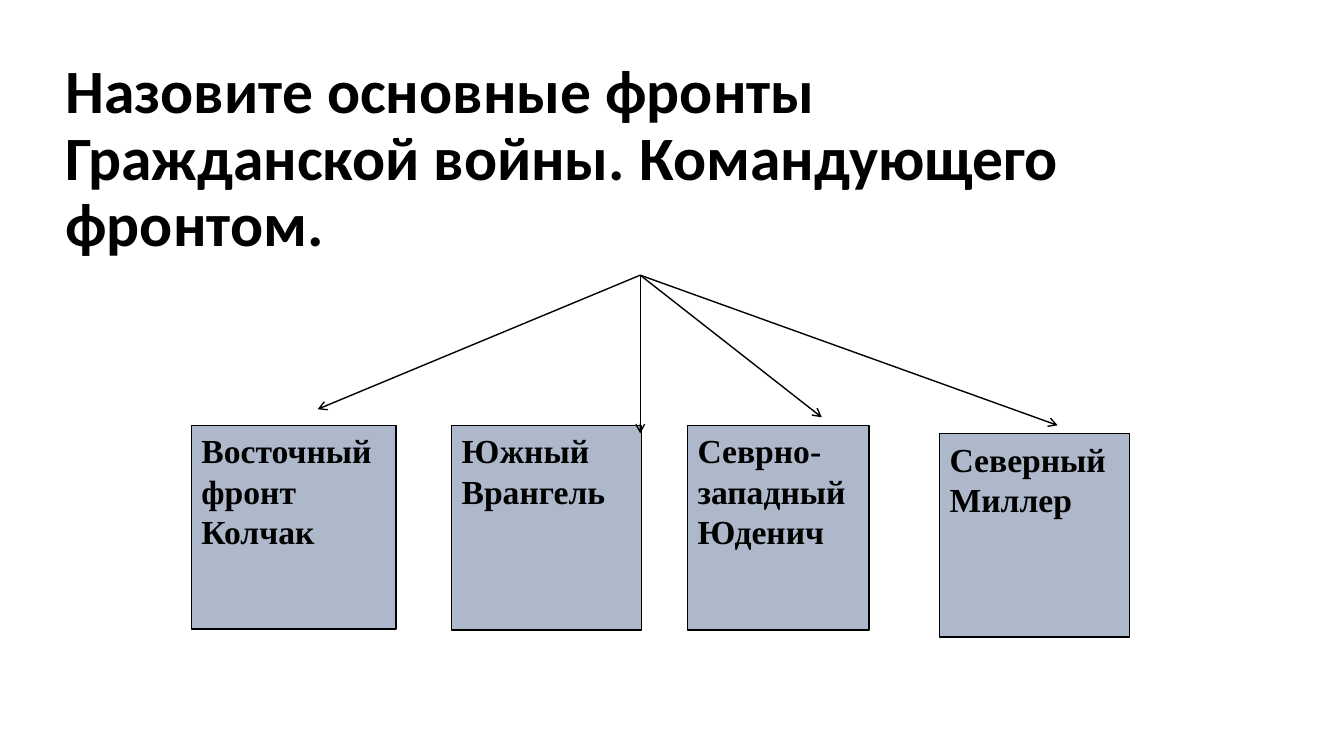
from lxml.etree import SubElement
from pptx import Presentation
from pptx.dml.color import RGBColor
from pptx.enum.shapes import MSO_CONNECTOR, MSO_SHAPE
from pptx.enum.text import MSO_ANCHOR, PP_ALIGN
from pptx.oxml.ns import qn
from pptx.util import Emu, Pt

PX = 9144  # EMU per px, 100 px to the inch
BLACK = "000000"
FRONT_FILL = "ADB9CA"

TITLE = "Назовите основные фронты Гражданской войны. Командующего фронтом."
TITLE_BOX = (55, 52, 1080, 214)
DIAGRAM_BOX = (190, 273, 930, 359)

# Front, commander, box within the diagram, arrow tip within the diagram
FRONTS = [
    ("Восточный фронт", "Колчак", (0, 149, 203, 202), (125, 133)),
    ("Южный", "Врангель", (258, 149, 188, 203), (445, 157)),
    ("Севрно-западный", "Юденич", (492, 149, 180, 203), (625, 141)),
    ("Северный", "Миллер", (742, 157, 188, 202), (859, 149)),
]
ARROW_ORIGIN = (445, 0)


def px(*lengths):
    return [Emu(length * PX) for length in lengths]


def color(value):
    return RGBColor.from_string(value)


def write(frame, text, font, size, anchor, spacing=1.0):
    frame.word_wrap = True
    frame.vertical_anchor = anchor
    frame.text = text
    for para in frame.paragraphs:
        para.alignment = PP_ALIGN.LEFT
        para.line_spacing = spacing
        for span in para.runs:
            span.font.name = font
            span.font.size = Pt(size)
            span.font.bold = True
            span.font.color.rgb = color(BLACK)


def style_line(line):
    line.color.rgb = color(BLACK)
    line.width = Pt(1)


def add_title(page, box):
    title = page.shapes.add_textbox(*px(*box))
    write(title.text_frame, TITLE, "Calibri", 44, MSO_ANCHOR.MIDDLE, 0.9)


def add_front(page, box, front, commander):
    card = page.shapes.add_shape(MSO_SHAPE.RECTANGLE, *px(*box))
    card.shadow.inherit = False
    card.fill.solid()
    card.fill.fore_color.rgb = color(FRONT_FILL)
    style_line(card.line)
    write(card.text_frame, f"{front}\n{commander}", "Times New Roman", 24,
          MSO_ANCHOR.TOP)


def add_arrow(page, start, end):
    arrow = page.shapes.add_connector(MSO_CONNECTOR.STRAIGHT, *px(*start, *end))
    style_line(arrow.line)
    # Open arrowhead at the tip, no shadow
    SubElement(arrow.line._get_or_add_ln(), qn("a:tailEnd"), type="arrow")
    SubElement(arrow._element.spPr, qn("a:effectLst"))


def add_diagram(page, box):
    left, top = box[:2]
    origin = (left + ARROW_ORIGIN[0], top + ARROW_ORIGIN[1])
    for front, commander, (x, y, width, height), tip in FRONTS:
        add_front(page, (left + x, top + y, width, height), front, commander)
        add_arrow(page, origin, (left + tip[0], top + tip[1]))


def main():
    deck = Presentation()
    deck.slide_width, deck.slide_height = px(1333, 750)
    page = deck.slides.add_slide(deck.slide_layouts[6])
    add_title(page, TITLE_BOX)
    add_diagram(page, DIAGRAM_BOX)
    deck.save("out.pptx")


if __name__ == "__main__":
    main()
